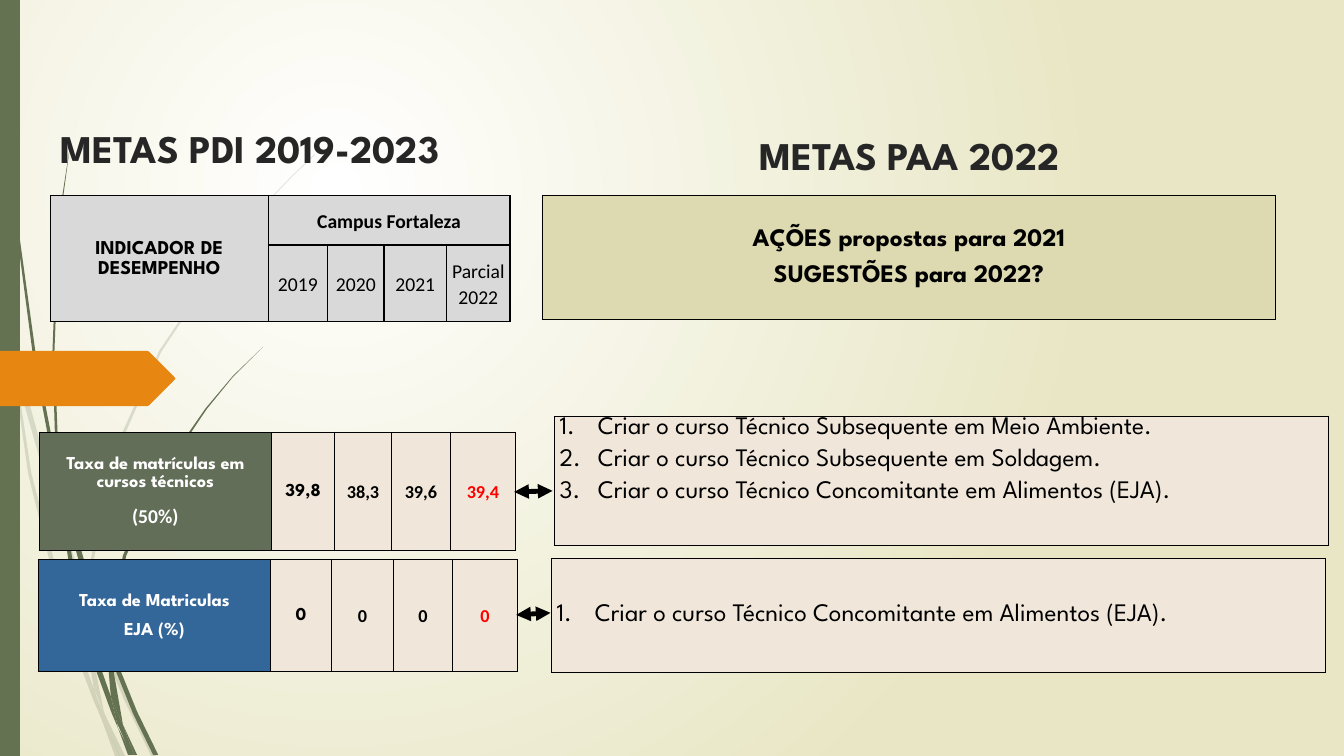
from lxml import etree
from pptx import Presentation, util as u
from pptx.dml.color import RGBColor
from pptx.enum import shapes, text
from pptx.oxml.ns import qn

theme = {
    "glow": ("FFFFFF", "E8E6C4"), "stalk": "647252", "marker": "E78712",
    "line": "000000", "border_pt": 1, "arrow_pt": 3.5,
    "grey": "D9D9D9", "olive": "DDD9B0", "moss": "636E58", "blue": "336699", "cream": "F0E7DA",
    "styles": {
        "title": ("League Spartan", 28, True, "262626"),
        "indicator": ("League Spartan", 14, True, "000000"),
        "campus": ("Calibri", 14, True, "000000"),
        "year": ("Calibri", 14, False, "000000"),
        "banner": ("League Spartan", 18, True, "000000"),
        "rate": ("League Spartan", 13, True, "FFFFFF"),
        "target": ("Calibri", 14, True, "FFFFFF"),
        "first": ("League Spartan", 13, True, "000000"),
        "value": ("Calibri", 13, True, "000000"),
        "partial": ("Calibri", 13, True, "FF0000"),
        "action": ("League Spartan", 18, False, "000000"),
    },
    "paragraphs": {
        "tight": {"alignment": text.PP_ALIGN.CENTER, "line_spacing": 1.07},
        "spaced": {"alignment": text.PP_ALIGN.CENTER, "line_spacing": 1.07, "space_after": u.Pt(8)},
        "numbered": {"alignment": text.PP_ALIGN.JUSTIFY, "space_after": u.Pt(6)},
    },
}

titles = [
    ("METAS PDI 2019-2023", (-0.27, 0.97, 5.5, 0.99), text.MSO_ANCHOR.MIDDLE),
    ("METAS PAA 2022", (6.41, 1.12, 5.22, 0.7), text.MSO_ANCHOR.BOTTOM),
]


def results(fill, label, values):
    kinds = ("first", "value", "value", "partial")
    return [[(fill, "spaced", label)] + [("cream", "spaced", [(v, k)]) for v, k in zip(values, kinds)]]


def actions(*lines):
    return [[("cream", "numbered", [(line, "action") for line in lines])]]


years = ("2019", "2020", "2021", "Parcial 2022")
tables = [
    {"at": (0.39, 4.29), "cols": (2.3, 0.63, 0.56, 0.59, 0.64), "rows": (1.17,),
     "cells": results("moss", [("Taxa de matrículas em cursos técnicos", "rate"), ("(50%)", "target")],
                      ("39,8", "38,3", "39,6", "39,4"))},
    {"at": (5.5, 4.13), "cols": (7.68,), "rows": (1.28,), "top": True,
     "cells": actions("Criar o curso Técnico Subsequente em Meio Ambiente.",
                      "Criar o curso Técnico Subsequente em Soldagem.",
                      "Criar o curso Técnico Concomitante em Alimentos (EJA).")},
    {"at": (0.38, 5.55), "cols": (2.3, 0.61, 0.61, 0.59, 0.64), "rows": (1.11,),
     "cells": results("blue", [("Taxa de Matriculas", "rate"), ("EJA (%)", "rate")], ("0",) * 4)},
    {"at": (5.47, 5.54), "cols": (7.68,), "rows": (1.13,),
     "cells": actions("Criar o curso Técnico Concomitante em Alimentos (EJA).")},
    {"at": (5.38, 1.94), "cols": (7.27,), "rows": (1.23,),
     "cells": [[("olive", "spaced", [("AÇÕES propostas para 2021", "banner"),
                                      ("SUGESTÕES para 2022?", "banner")])]]},
    {"at": (0.5, 1.94), "cols": (2.16, 0.59, 0.56, 0.62, 0.63), "rows": (0.49, 0.76),
     "merges": [(0, 0, 1, 0), (0, 1, 0, 4)],
     "cells": [[("grey", "spaced", [("INDICADOR DE DESEMPENHO", "indicator")]),
                ("grey", "tight", [("Campus Fortaleza", "campus")])] + [("grey", "tight", [])] * 3,
               [("grey", "tight", [])] + [("grey", "tight", [(year, "year")]) for year in years]]},
]
arrows = [(5.1, 4.88, 5.48, 4.87), (5.12, 6.1, 5.46, 6.08)]

pale_stalks = [
    [(0.11, 3.5), (0.09, 3.22), (0, 2.82), (0, 2.99), (0.1, 3.44)],
    [(0.58, 5.22), (0.84, 5.99), (0.85, 5.86), (0.62, 5.2), (0.14, 3.45), (0.17, 3.76)],
    [(0.92, 6.07), (0.88, 5.96), (0.88, 6.1), (1.23, 6.94), (1.5, 7.5), (1.55, 7.5), (1.27, 6.92)],
    [(1.19, 7.5), (1.24, 7.5), (1.05, 7.11)],
    [(0.93, 6.83), (0.7, 6.19), (0.31, 4.69), (0.17, 3.76), (0.11, 3.5), (0.28, 4.7), (0.65, 6.21),
     (0.92, 6.93), (1.01, 7.14), (0.99, 7.07)],
    [(0.84, 5.99), (0.87, 6.46), (0.93, 6.83), (1.05, 7.11), (1.03, 7.06), (0.91, 6.46), (0.88, 6.08)],
    [(0.88, 5.84), (1.1, 4.62), (1.6, 3.49), (2.29, 2.45), (2.68, 1.98), (2.9, 1.75), (3.12, 1.54),
     (3.12, 1.53), (2.89, 1.75), (2.68, 1.97), (2.28, 2.44), (1.58, 3.48), (1.07, 4.61), (0.85, 5.84),
     (0.88, 5.96)],
    [(1.01, 7.14), (1.14, 7.5), (1.19, 7.5)],
    [(0.88, 6.08), (0.88, 5.96), (0.85, 5.86), (0.84, 5.99)],
    [(0.96, 6.92), (0.93, 6.83), (0.99, 7.07), (1.01, 7.14), (1.19, 7.5), (1.05, 7.11)],
]
dark_stalks = [
    [(0.07, 1.1), (0.17, 2.33), (0.33, 3.55), (0.56, 4.77), (0.57, 4.81), (0.55, 4.53), (0.36, 3.55),
     (0.19, 2.32), (0.08, 1.09), (0.05, 0.48), (0.04, 0), (0.03, 0), (0.04, 0.48)],
    [(0.88, 5.92), (1.06, 6.45), (1.06, 6.31), (0.93, 5.9), (0.6, 4.72), (0.64, 5.05)],
    [(1.13, 6.49), (1.1, 6.41), (1.11, 6.56), (1.32, 7.08), (1.52, 7.49), (1.57, 7.49), (1.36, 7.06)],
    [(1.1, 6.91), (0.98, 6.57), (0.72, 5.56), (0.64, 5.05), (0.57, 4.77), (0.68, 5.57), (0.93, 6.59),
     (1.11, 7.08), (1.17, 7.22), (1.16, 7.17)],
    [(0.6, 4.72), (0.58, 4.53), (0.54, 3.49), (0.58, 2.45), (0.63, 1.93), (0.7, 1.41), (0.62, 1.93),
     (0.56, 2.45), (0.52, 3.49), (0.55, 4.49)],
    [(1.33, 7.49), (1.36, 7.49), (1.22, 7.19)],
    [(0.57, 4.77), (0.64, 5.05), (0.6, 4.72), (0.55, 4.49), (0.55, 4.53)],
    [(1.11, 6.33), (1.25, 5.52), (1.58, 4.76), (2.05, 4.06), (2.31, 3.74), (2.61, 3.44), (2.31, 3.73),
     (2.04, 4.05), (1.56, 4.74), (1.22, 5.51), (1.06, 6.31), (1.1, 6.41)],
    [(1.17, 7.22), (1.27, 7.49), (1.31, 7.49)],
    [(1.06, 6.45), (1.1, 6.91), (1.16, 7.06), (1.22, 7.19), (1.11, 6.56), (1.09, 6.51)],
    [(1.06, 6.45), (1.11, 6.56), (1.1, 6.41), (1.06, 6.31)],
    [(1.16, 7.06), (1.1, 6.91), (1.16, 7.17), (1.3, 7.49), (1.33, 7.49), (1.22, 7.19)],
]
side_bar = [(0, 0), (0.2, 0), (0.2, 7.5), (0, 7.5)]
marker = [(0, 3.48), (1.46, 3.48), (1.48, 3.49), (1.73, 3.74), (1.74, 3.755), (1.73, 3.77),
          (1.48, 4.02), (1.46, 4.03), (0, 4.03)]


def inches(values):
    return [u.Inches(value) for value in values]


def assign(target, values):
    for key, value in values.items():
        setattr(target, key, value)


def child(parent, tag, **attributes):
    return etree.SubElement(parent, qn(tag), attributes)


def paint(fill, colour):
    fill.solid()
    fill.fore_color.rgb = RGBColor.from_string(colour)


def write(paragraph, words, style):
    run = paragraph.add_run()
    run.text = words
    face, size, bold, colour = theme["styles"][style]
    assign(run.font, {"name": face, "size": u.Pt(size), "bold": bold})
    run.font.color.rgb = RGBColor.from_string(colour)


def draw_outline(slide, points, colour, alpha=None):
    corners = [inches(point) for point in points]
    builder = slide.shapes.build_freeform(*corners[0], scale=1.0)
    builder.add_line_segments(corners[1:], close=True)
    outline = builder.convert_to_shape()
    outline.shadow.inherit = False
    outline.line.fill.background()
    paint(outline.fill, colour)
    if alpha:
        child(outline._element.spPr.find(".//" + qn("a:srgbClr")), "a:alpha", val=str(alpha * 1000))


def fill_cell(cell, fill, layout, lines, anchor):
    assign(cell, dict(zip(("margin_left", "margin_top", "margin_right", "margin_bottom"),
                          inches((0.05, 0.01, 0.05, 0)))))
    cell.vertical_anchor = anchor
    for index, (words, style) in enumerate(lines):
        paragraph = cell.text_frame.add_paragraph() if index else cell.text_frame.paragraphs[0]
        assign(paragraph, theme["paragraphs"][layout])
        if layout == "numbered":
            properties = paragraph._p.get_or_add_pPr()
            indent = u.Inches(0.38)
            properties.set("marL", str(indent))
            properties.set("indent", str(-indent))
            child(properties, "a:buFont", typeface="+mj-lt")
            child(properties, "a:buAutoNum", type="arabicPeriod")
        write(paragraph, words, style)
    properties = cell._tc.get_or_add_tcPr()
    for side in ("a:lnL", "a:lnR", "a:lnT", "a:lnB"):
        border = child(properties, side, w=str(u.Pt(theme["border_pt"])))
        child(child(border, "a:solidFill"), "a:srgbClr", val=theme["line"])
    paint(cell.fill, theme[fill])


def draw_table(slide, content):
    cols, rows = content["cols"], content["rows"]
    grid = slide.shapes.add_table(len(rows), len(cols),
                                  *inches((*content["at"], sum(cols), sum(rows)))).table
    assign(grid, {"first_row": False, "horz_banding": False})
    for column, width in zip(grid.columns, inches(cols)):
        column.width = width
    for row, height in zip(grid.rows, inches(rows)):
        row.height = height
    for top, left, bottom, right in content.get("merges", []):
        grid.cell(top, left).merge(grid.cell(bottom, right))
    anchor = text.MSO_ANCHOR.TOP if content.get("top") else text.MSO_ANCHOR.MIDDLE
    for r, row in enumerate(content["cells"]):
        for c, (fill, layout, lines) in enumerate(row):
            fill_cell(grid.cell(r, c), fill, layout, lines, anchor)


def draw_arrow(slide, ends):
    arrow = slide.shapes.add_connector(shapes.MSO_CONNECTOR.STRAIGHT, *inches(ends))
    arrow.line.width = u.Pt(theme["arrow_pt"])
    paint(arrow.line.fill, theme["line"])
    for end in ("a:headEnd", "a:tailEnd"):
        child(arrow.line._get_or_add_ln(), end, type="triangle")
    child(arrow._element.spPr, "a:effectLst")


def draw_background(slide):
    fill = slide.background.fill
    fill.gradient()
    for stop, position, colour in zip(fill.gradient_stops, (0, 1), theme["glow"]):
        stop.position = position
        stop.color.rgb = RGBColor.from_string(colour)
    gradient = slide._element.find(".//" + qn("a:gradFill"))
    gradient.remove(gradient.find(qn("a:lin")))
    circle = etree.Element(qn("a:path"), {"path": "circle"})
    child(circle, "a:fillToRect", l="50000", t="50000", r="100000", b="100000")
    gradient.find(qn("a:gsLst")).addnext(circle)


def main():
    deck = Presentation()
    assign(deck, {"slide_width": u.Inches(13.33), "slide_height": u.Inches(7.5)})
    slide = deck.slides.add_slide(deck.slide_layouts[6])
    draw_background(slide)
    for stalk in pale_stalks:
        draw_outline(slide, stalk, theme["stalk"], alpha=20)
    for stalk in dark_stalks + [side_bar]:
        draw_outline(slide, stalk, theme["stalk"])
    draw_outline(slide, marker, theme["marker"])
    for content in tables:
        draw_table(slide, content)
    for ends in arrows:
        draw_arrow(slide, ends)
    for words, place, anchor in titles:
        frame = slide.shapes.add_textbox(*inches(place)).text_frame
        assign(frame, {"word_wrap": True, "vertical_anchor": anchor})
        frame.paragraphs[0].alignment = text.PP_ALIGN.CENTER
        write(frame.paragraphs[0], words, "title")
    deck.save("out.pptx")


if __name__ == "__main__":
    main()
